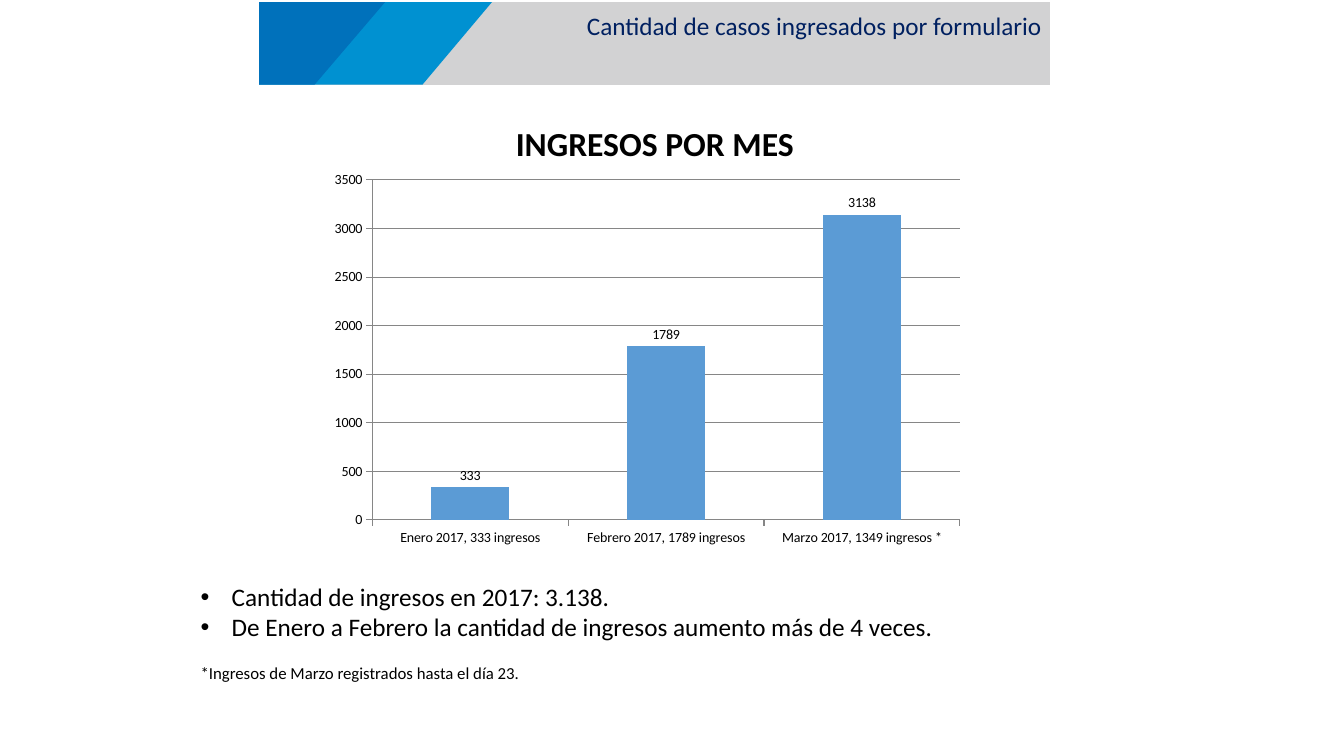
from dataclasses import dataclass

from lxml import etree
from pptx import Presentation
from pptx.chart.data import CategoryChartData
from pptx.dml.color import RGBColor as RGB
from pptx.enum.chart import XL_CHART_TYPE as CT, XL_LABEL_POSITION as LP, XL_TICK_MARK as TM
from pptx.enum.text import PP_ALIGN as AL
from pptx.oxml.ns import qn
from pptx.util import Inches, Pt


@dataclass(frozen=True)
class Theme:
    font: str = "Calibri"
    text: str = "000000"
    navy: str = "002060"
    gray: str = "D2D2D3"
    sky: str = "0091D1"
    blue: str = "0071BB"
    bar: str = "5B9BD5"
    axis: str = "868686"
    title: int = 24
    body: int = 18
    note: int = 12
    chart: int = 10


class SlideBuilder:
    def __init__(self, slide, theme):
        self.s, self.th = slide, theme

    def text_box(self, left, top, width, height):
        tf = self.s.shapes.add_textbox(*map(Inches, (left, top, width, height))).text_frame
        tf.word_wrap = True
        return tf

    def para(self, tf, text, size, color=None, bold=False, align=AL.LEFT, bullet=False, before=0):
        p = tf.paragraphs[0]
        if p.runs:
            p = tf.add_paragraph()
        p.alignment = align
        p.space_before = Pt(before)
        r = p.add_run()
        r.text = text
        r.font.name, r.font.size, r.font.bold = self.th.font, Pt(size), bold
        r.font.color.rgb = RGB.from_string(color or self.th.text)
        if bullet:
            pPr = p._p.get_or_add_pPr()
            pPr.set("marL", str(Inches(0.31)))
            pPr.set("indent", str(-Inches(0.31)))
            etree.SubElement(pPr, qn("a:buFont")).set("typeface", "Arial")
            etree.SubElement(pPr, qn("a:buChar")).set("char", "•")

    def banner(self, left, top, bottom, bands):
        """Stack bands given as (top right x, bottom right x, colour)."""
        group = self.s.shapes.add_group_shape()
        for top_x, bottom_x, color in bands:
            fb = group.shapes.build_freeform(Inches(left), Inches(top))
            corners = [(top_x, top), (bottom_x, bottom), (left, bottom)]
            fb.add_line_segments([(Inches(x), Inches(y)) for x, y in corners], close=True)
            sp = fb.convert_to_shape()
            sp.shadow.inherit = False
            sp.fill.solid()
            sp.fill.fore_color.rgb = RGB.from_string(color)
            sp.line.fill.background()

    def column_chart(self, left, top, width, height, name, values, maximum, step):
        data = CategoryChartData()
        data.categories = list(values)
        data.add_series(name, list(values.values()))
        chart = self.s.shapes.add_chart(
            CT.COLUMN_CLUSTERED, *map(Inches, (left, top, width, height)), data).chart
        chart.has_title = chart.has_legend = False
        chart.font.name, chart.font.size = self.th.font, Pt(self.th.chart)
        chart.font.color.rgb = RGB.from_string(self.th.text)

        # Axes and gridlines
        val, cat = chart.value_axis, chart.category_axis
        val.minimum_scale, val.maximum_scale, val.major_unit = 0, maximum, step
        val.has_major_gridlines = True
        for axis in (val, cat):
            axis.major_tick_mark, axis.minor_tick_mark = TM.OUTSIDE, TM.NONE
        for item in (val, cat, val.major_gridlines):
            item.format.line.color.rgb = RGB.from_string(self.th.axis)
            item.format.line.width = Pt(0.75)

        # Columns and value labels
        plot = chart.plots[0]
        plot.gap_width, plot.vary_by_categories = 150, False
        fill = plot.series[0].format.fill
        fill.solid()
        fill.fore_color.rgb = RGB.from_string(self.th.bar)
        plot.has_data_labels = True
        plot.data_labels.show_value = True
        plot.data_labels.position = LP.OUTSIDE_END


def main():
    prs = Presentation()
    prs.slide_width, prs.slide_height = Inches(13.33), Inches(7.5)
    th = Theme()
    b = SlideBuilder(prs.slides.add_slide(prs.slide_layouts[6]), th)

    # Chart heading
    tf = b.text_box(4.33, 1.17, 4.33, 0.63)
    b.para(tf, "INGRESOS POR MES", th.title, bold=True, align=AL.CENTER)

    # Findings and footnote
    tf = b.text_box(1.89, 5.72, 9.21, 1.11)
    for line in ("Cantidad de ingresos en 2017: 3.138.",
                 "De Enero a Febrero la cantidad de ingresos aumento más de 4 veces."):
        b.para(tf, line, th.body, bullet=True)
    b.para(tf, "*Ingresos de Marzo registrados hasta el día 23.", th.note, before=14.65)

    # Monthly intake
    b.column_chart(3.19, 1.63, 6.46, 3.86, "Ingresos", {
        "Enero 2017, 333 ingresos": 333,
        "Febrero 2017, 1789 ingresos": 1789,
        "Marzo 2017, 1349 ingresos *": 3138,
    }, maximum=3500, step=500)

    # Header banner
    b.banner(2.57, 0.02, 0.84, [
        (10.41, 10.41, th.gray), (4.88, 4.19, th.sky), (3.82, 3.12, th.blue)])
    tf = b.text_box(5.21, 0.05, 5.22, 0.4)
    b.para(tf, "Cantidad de casos ingresados por formulario", th.body, th.navy, align=AL.RIGHT)

    prs.save("out.pptx")


if __name__ == "__main__":
    main()
